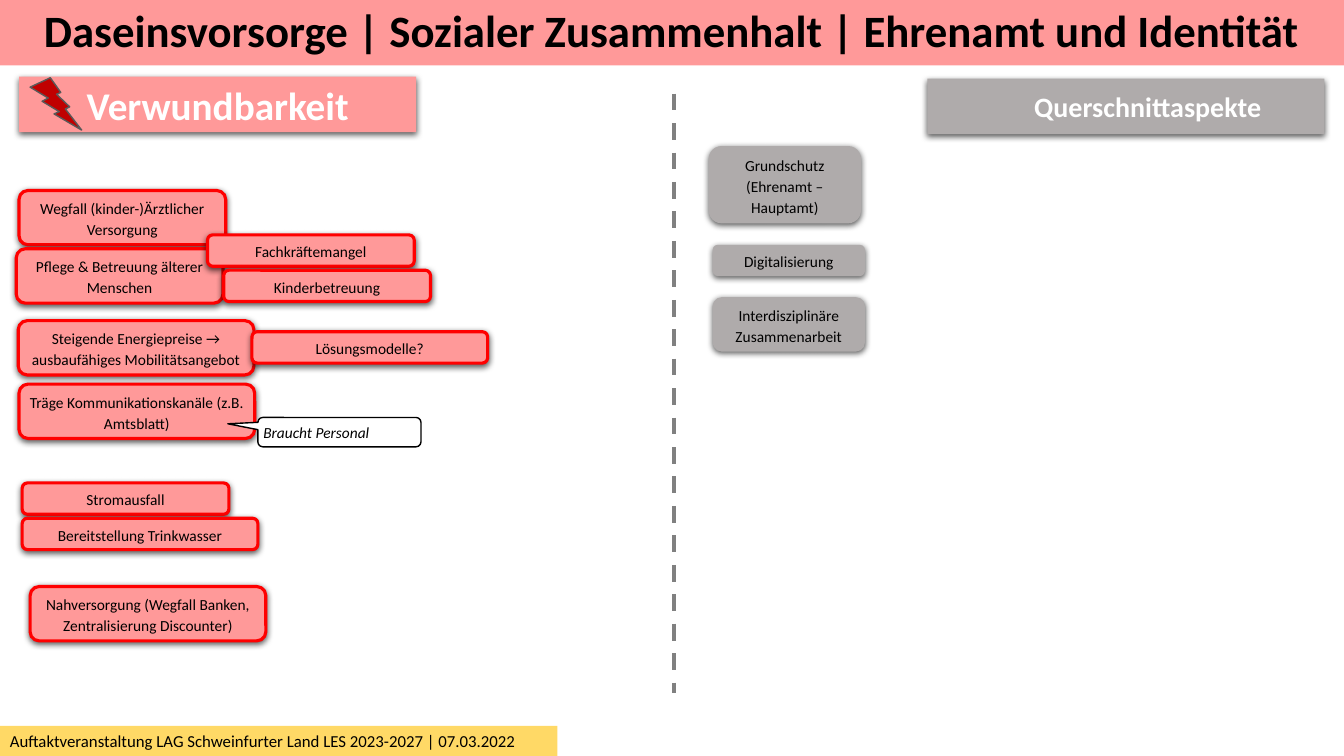
"""Build the slide on services of general interest, cohesion and identity."""
from lxml import etree
from pptx import Presentation
from pptx.dml.color import RGBColor
from pptx.enum.dml import MSO_LINE_DASH_STYLE as Dash
from pptx.enum.shapes import MSO_CONNECTOR as Connector, MSO_SHAPE as Shape
from pptx.enum.text import MSO_ANCHOR as Anchor, MSO_AUTO_SIZE as AutoSize, PP_ALIGN as Align
from pptx.oxml import parse_xml
from pptx.oxml.ns import nsdecls, qn
from pptx.util import Cm, Pt

PINK, RED, GREY, BLACK, WHITE = "FF9999", "FF0000", "AFABAB", "000000", "FFFFFF"
NARROW, WIDE, ASPECT = 5.21, 5.94, 3.84
HEADER_SIZE = (10.01, 1.4)
SHADOW = (
    f'<a:outerShdw {nsdecls("a")} blurRad="57150" dist="19050" dir="5400000" '
    'algn="ctr" rotWithShape="0"><a:srgbClr val="000000"><a:alpha val="63000"/>'
    "</a:srgbClr></a:outerShdw>"
)

VULNERABILITIES = [
    (0.56, 12.17, NARROW, 1, "Stromausfall"),
    (0.48, 4.8, NARROW, 2, "Wegfall (kinder-)Ärztlicher Versorgung"),
    (0.41, 6.27, NARROW, 2, "Pflege & Betreuung älterer Menschen"),
    (5.23, 5.92, NARROW, 1, "Fachkräftemangel"),
    (0.46, 8.08, WIDE, 2, "Steigende Energiepreise → ausbaufähiges Mobilitätsangebot"),
    (6.35, 8.36, WIDE, 1, "Lösungsmodelle?"),
    (0.48, 9.68, WIDE, 2, "Träge Kommunikationskanäle (z.B. Amtsblatt)"),
    (5.64, 6.81, NARROW, 1, "Kinderbetreuung"),
    (0.56, 13.06, WIDE, 1, "Bereitstellung Trinkwasser"),
    (0.76, 14.78, WIDE, 2, "Nahversorgung (Wegfall Banken, Zentralisierung Discounter)"),
]
CROSS_CUTTING = [
    (17.86, 3.68, ASPECT, 3, "Grundschutz (Ehrenamt – Hauptamt)"),
    (17.96, 6.17, ASPECT, 1, "Digitalisierung"),
    (17.96, 7.49, ASPECT, 2, "Interdisziplinäre Zusammenarbeit"),
]


def color(value):
    """Turn a hex string into a colour."""
    return RGBColor.from_string(value)


def add_block(slide, kind, box, fill, line=None, line_width=1, shadow=False):
    """Add a filled preset shape; box is left, top, width, height in cm."""
    shape = slide.shapes.add_shape(kind, *map(Cm, box))
    shape.fill.solid()
    shape.fill.fore_color.rgb = color(fill)
    if line:
        shape.line.color.rgb = color(line)
        shape.line.width = Pt(line_width)
    else:
        shape.line.fill.background()
    shape.shadow.inherit = False
    if shadow:
        shape._element.spPr.find(qn("a:effectLst")).append(parse_xml(SHADOW))
    return shape


def write(shape, text, size, font_color=BLACK, align=Align.CENTER, anchor=Anchor.MIDDLE,
          bold=False, italic=False, spacing=None, margins=(0.25, 0.13), grow=False):
    """Write one paragraph into a shape; margins are horizontal and vertical in cm."""
    frame = shape.text_frame
    frame.word_wrap = True
    frame.vertical_anchor = anchor
    frame.margin_left = frame.margin_right = Cm(margins[0])
    frame.margin_top = frame.margin_bottom = Cm(margins[1])
    frame.auto_size = AutoSize.SHAPE_TO_FIT_TEXT if grow else AutoSize.NONE
    paragraph = frame.paragraphs[0]
    paragraph.text = text
    paragraph.alignment = align
    paragraph.line_spacing = spacing
    font = paragraph.font
    font.name, font.size, font.bold, font.italic = "Calibri", Pt(size), bold, italic
    font.color.rgb = color(font_color)


def add_card(slide, left, top, width, lines, text, fill, line=None):
    """Add a rounded card whose height follows its number of text lines."""
    box = (left, top, width, 0.21 + 0.58 * lines)
    card = add_block(slide, Shape.ROUNDED_RECTANGLE, box, fill, line, 2.25, shadow=True)
    write(card, text, 11, spacing=Pt(15), margins=(0.1, 0.1), grow=True)


def add_header(slide, left, top, text, size, fill):
    """Add a column header and return it."""
    header = add_block(slide, Shape.RECTANGLE, (left, top, *HEADER_SIZE), fill, shadow=True)
    write(header, text, size, WHITE, bold=True, margins=(0.25, 0.1))
    return header


def add_divider(slide, x, top, bottom):
    """Add the dashed line between the two columns."""
    divider = slide.shapes.add_connector(Connector.STRAIGHT, Cm(x), Cm(top), Cm(x), Cm(bottom))
    divider.line.color.rgb = color("808080")
    divider.line.width = Pt(3)
    divider.line.dash_style = Dash.DASH
    etree.SubElement(divider._element.spPr, qn("a:effectLst"))


def add_callout(slide, box, text):
    """Add a speech bubble pointing to the left."""
    callout = add_block(slide, Shape.ROUNDED_RECTANGULAR_CALLOUT, box, WHITE, BLACK)
    for index, value in enumerate((-0.684, -0.283, 0.167)):
        callout.adjustments[index] = value
    write(callout, text, 11, align=Align.LEFT, anchor=Anchor.TOP, italic=True,
          margins=(0.1, 0.1), grow=True)


def main():
    """Build and save the slide."""
    presentation = Presentation()
    presentation.slide_width, presentation.slide_height = Cm(33.87), Cm(19.05)
    slide = presentation.slides.add_slide(presentation.slide_layouts[6])

    title = add_block(slide, Shape.RECTANGLE, (0, 0, 33.87, 1.65), PINK)
    write(title, "Daseinsvorsorge | Sozialer Zusammenhalt | Ehrenamt und Identität", 32,
          bold=True, spacing=0.9)

    add_header(slide, 0.48, 1.93, "Verwundbarkeit", 28, PINK)
    add_block(slide, Shape.LIGHTNING_BOLT, (0.76, 1.96, 1.3, 1.32), "C00000", "595959")
    aspects_header = add_header(slide, 23.37, 1.98, "Querschnittaspekte", 20, GREY)
    aspects_header.text_frame.margin_left = Cm(1.35)
    add_divider(slide, 16.99, 2.36, 17.45)

    for card in VULNERABILITIES:
        add_card(slide, *card, PINK, RED)
    for card in CROSS_CUTTING:
        add_card(slide, *card, GREY)
    add_callout(slide, (6.5, 10.52, 4.11, 0.74), "Braucht Personal")

    footer = add_block(slide, Shape.RECTANGLE, (0, 18.29, 14.05, 0.76), "FFD966")
    write(footer, "Auftaktveranstaltung LAG Schweinfurter Land LES 2023-2027 | 07.03.2022", 12,
          align=Align.LEFT, anchor=Anchor.TOP, grow=True)
    presentation.save("out.pptx")


if __name__ == "__main__":
    main()
